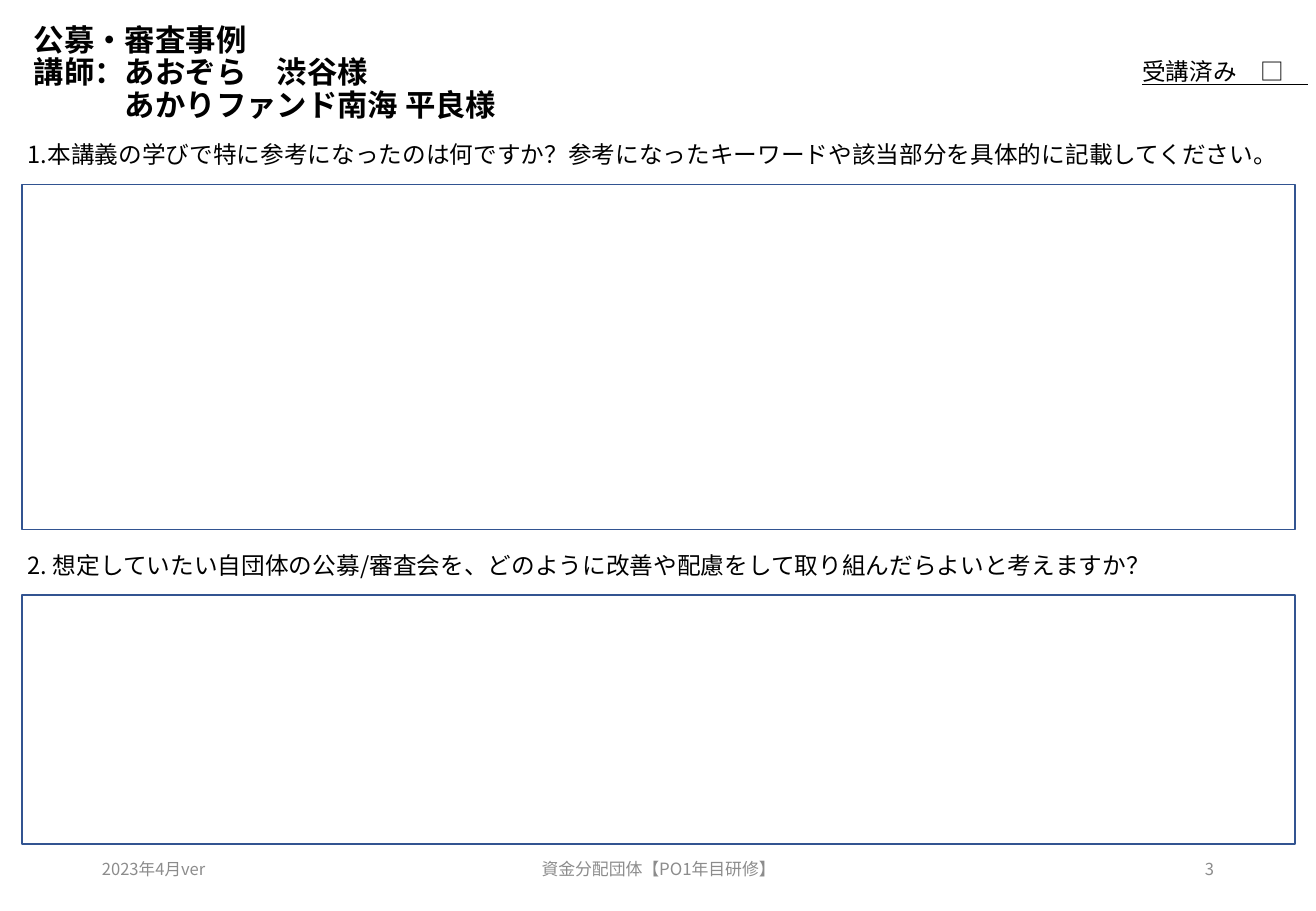
import dataclasses

import lxml.etree
import pptx
import pptx.dml.color
import pptx.enum.shapes
import pptx.enum.text
import pptx.oxml.ns
import pptx.util

PX = 9144  # EMU per px, 100 px to the inch
ALIGN = pptx.enum.text.PP_ALIGN
ANCHOR = pptx.enum.text.MSO_ANCHOR


@dataclasses.dataclass(frozen=True)
class Theme:
    font: str = "Noto Sans CJK JP"
    ink: str = "000000"
    muted: str = "8C8C8C"
    border: str = "325491"
    paper: str = "FFFFFF"
    title_size: float = 18
    body_size: float = 14
    footer_size: float = 10
    small_size: float = 9.8


THEME = Theme()


def px(*lengths):
    return [pptx.util.Emu(length * PX) for length in lengths]


def rgb(value):
    return pptx.dml.color.RGBColor.from_string(value)


def style_font(font, size, color, bold=False, underline=False):
    font.name = THEME.font
    font.size = pptx.util.Pt(size)
    font.color.rgb = rgb(color)
    font.bold = bold
    font.underline = underline


def set_east_asian_font(paragraph):
    properties = paragraph._p.get_or_add_pPr()
    latin = properties.find(".//" + pptx.oxml.ns.qn("a:latin"))
    east_asian = lxml.etree.Element(pptx.oxml.ns.qn("a:ea"), typeface=THEME.font)
    latin.addnext(east_asian)


def add_text(slide, box, lines, size, color=THEME.ink, align=ALIGN.LEFT,
             anchor=ANCHOR.TOP, spacing=1.0, **style):
    frame = slide.shapes.add_textbox(*px(*box)).text_frame
    frame.word_wrap = True
    frame.vertical_anchor = anchor
    frame.text = "\n".join(lines)
    for paragraph in frame.paragraphs:
        paragraph.alignment = align
        paragraph.line_spacing = spacing
        style_font(paragraph.font, size, color, **style)
        set_east_asian_font(paragraph)
    return frame


def indent(paragraph, points):
    paragraph._p.get_or_add_pPr().set("marL", str(pptx.util.Pt(points)))


def add_answer_box(slide, top, height):
    shape = slide.shapes.add_shape(
        pptx.enum.shapes.MSO_SHAPE.RECTANGLE, *px(18, top, 1048, height))
    shape.shadow.inherit = False
    shape.fill.solid()
    shape.fill.fore_color.rgb = rgb(THEME.paper)
    shape.line.color.rgb = rgb(THEME.border)
    shape.line.width = pptx.util.Pt(1)


def add_question(slide, top, text):
    add_text(slide, (13, top, 1048, 34), [text], THEME.body_size)


def add_footer(slide, left, width, text, size, align):
    add_text(slide, (left, 695, width, 40), [text], size, THEME.muted,
             align, ANCHOR.MIDDLE)


def main():
    presentation = pptx.Presentation()
    presentation.slide_width, presentation.slide_height = px(1083, 750)
    slide = presentation.slides.add_slide(presentation.slide_layouts[6])

    # Title, with the second lecturer aligned under the first
    title = add_text(
        slide, (18, 15, 934, 92),
        ["公募・審査事例", "講師：あおぞら　渋谷様", "あかりファンド南海 平良様"],
        THEME.title_size, anchor=ANCHOR.MIDDLE, spacing=0.9, bold=True)
    indent(title.paragraphs[2], 3 * THEME.title_size)

    # Attendance check
    add_text(slide, (930, 42, 201, 34), ["受講済み　□　"],
             THEME.body_size, underline=True)

    # Questions and answer boxes
    add_question(slide, 110, "1.本講義の学びで特に参考になったのは何ですか？"
                 "参考になったキーワードや該当部分を具体的に記載してください。")
    add_answer_box(slide, 152, 284)
    add_question(slide, 449, "2. 想定していたい自団体の公募/審査会を、"
                 "どのように改善や配慮をして取り組んだらよいと考えますか？")
    add_answer_box(slide, 490, 205)

    # Footer
    add_footer(slide, 74, 244, "2023年4月ver", THEME.small_size, ALIGN.LEFT)
    add_footer(slide, 359, 366, "資金分配団体【PO1年目研修】",
               THEME.footer_size, ALIGN.CENTER)
    add_footer(slide, 765, 244, "3", THEME.small_size, ALIGN.RIGHT)

    presentation.save("out.pptx")


if __name__ == "__main__":
    main()
